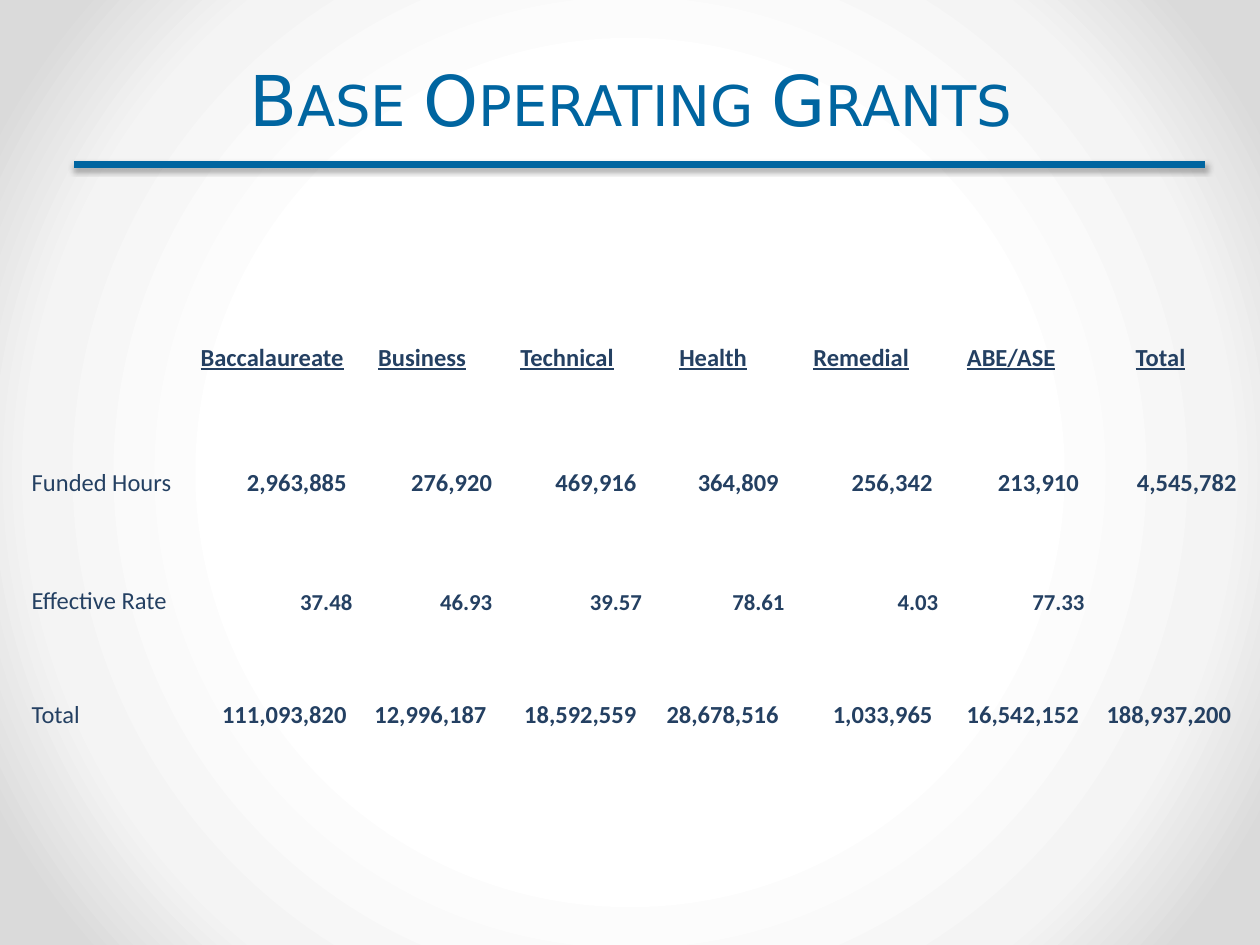
from lxml.etree import SubElement
from pptx import Presentation
from pptx.dml.color import RGBColor
from pptx.enum.shapes import MSO_CONNECTOR
from pptx.enum.text import MSO_ANCHOR, MSO_AUTO_SIZE, PP_ALIGN
from pptx.oxml import parse_xml
from pptx.oxml.ns import nsdecls, qn
from pptx.util import Cm, Pt

BLUE = RGBColor(0x00, 0x65, 0xA0)
NAVY = RGBColor(0x24, 0x40, 0x62)
BLACK = RGBColor(0x00, 0x00, 0x00)
STOPS = (
    (50, RGBColor(0xFF, 0xFF, 0xFF)),
    (76, RGBColor(0xF4, 0xF4, 0xF4)),
    (92, RGBColor(0xDA, 0xDA, 0xDA)),
)
PLAIN = "{2D5ABB26-0587-4C30-8999-92F81FD0307C}"
WIDTHS = (3.23, 3.23, 2.82, 3.02, 2.87, 3.1, 2.95, 3.07)
HEIGHTS = (3.2, 0.91, 1.6, 0.89, 1.5, 0.79, 1.5)
GAP = 0.11
HEADS = ("", "Baccalaureate", "Business", "Technical", "Health",
         "Remedial", "ABE/ASE", "Total")
HOURS = ("Funded Hours", "2,963,885", "276,920", "469,916", "364,809",
         "256,342", "213,910", "4,545,782")
RATES = ("Effective Rate", "37.48", "46.93", "39.57", "78.61", "4.03", "77.33", "")
TOTALS = ("Total", "111,093,820", "12,996,187", "18,592,559", "28,678,516",
          "1,033,965", "16,542,152", "188,937,200")
BLANK = ("",) * len(HEADS)


def write(frame, text, size=14, face="Calibri", color=NAVY, bold=False,
          under=False, caps=False, align=PP_ALIGN.LEFT, lead=None):
    """Put one formatted paragraph in a text frame."""
    para = frame.paragraphs[0]
    para.alignment = align
    if lead:
        para.line_spacing = Pt(lead)
    run = para.add_run()
    run.text = text
    font = run.font
    font.size, font.name, font.bold, font.underline = Pt(size), face, bold, under
    font.color.rgb = color
    if caps:
        run._r.get_or_add_rPr().set("cap", "small")


def paint_back(slide):
    """Give the slide a round gradient from white to grey."""
    slide.background.fill.gradient()
    stops = "".join(
        f'<a:gs pos="{pos * 1000}"><a:srgbClr val="{color}"/></a:gs>'
        for pos, color in STOPS)
    old = slide.element.find(".//" + qn("a:gradFill"))
    old.getparent().replace(old, parse_xml(
        f'<a:gradFill {nsdecls("a")} rotWithShape="1"><a:gsLst>{stops}</a:gsLst>'
        '<a:path path="circle"><a:fillToRect l="50000" t="50000" r="50000" '
        'b="50000"/></a:path></a:gradFill>'))


def set_title(slide, text):
    """Place and fill the title."""
    title = slide.shapes.title
    title.left, title.top, title.width, title.height = (
        Cm(1.3), Cm(0.74), Cm(22.83), Cm(2.21))
    frame = title.text_frame
    frame.auto_size = MSO_AUTO_SIZE.NONE
    frame.vertical_anchor = MSO_ANCHOR.BOTTOM
    write(frame, text, size=40, face="DejaVu Sans", color=BLUE, caps=True,
          align=PP_ALIGN.CENTER, lead=58)


def add_rule(slide):
    """Draw the thick rule with its soft shadow."""
    rule = slide.shapes.add_connector(
        MSO_CONNECTOR.STRAIGHT, Cm(1.5), Cm(3.32), Cm(24.3), Cm(3.32))
    rule.line.color.rgb = BLUE
    rule.line.width = Pt(4)
    effects = SubElement(rule._element.spPr, qn("a:effectLst"))
    shade = SubElement(effects, qn("a:outerShdw"), blurRad=str(Pt(3.1)),
                       dist=str(Pt(1.8)), dir="5400000", rotWithShape="0")
    color = SubElement(shade, qn("a:srgbClr"), val=str(BLACK))
    SubElement(color, qn("a:alpha"), val="35000")


def fill_row(cells, texts, size=14, align=PP_ALIGN.RIGHT, under=False,
             gap=0, flush=()):
    """Fill one row: a plain label, then bold entries."""
    for col, (cell, text) in enumerate(zip(cells, texts)):
        cell.fill.background()
        cell.vertical_anchor = MSO_ANCHOR.BOTTOM
        cell.margin_left = cell.margin_top = cell.margin_bottom = 0
        cell.margin_right = Cm(0 if col == 0 or col in flush else gap)
        if col == 0:
            write(cell.text_frame, text)
        else:
            write(cell.text_frame, text, size=size, bold=True, under=under,
                  align=align)


def add_grid(slide):
    """Build the table of grants."""
    frame = slide.shapes.add_table(
        len(HEIGHTS), len(WIDTHS), Cm(0.64), Cm(4.32),
        Cm(sum(WIDTHS)), Cm(sum(HEIGHTS)))
    table = frame.table
    table.first_row = table.horz_banding = False
    table._tbl.tblPr.find(qn("a:tableStyleId")).text = PLAIN
    for column, width in zip(table.columns, WIDTHS):
        column.width = Cm(width)
    for row, height in zip(table.rows, HEIGHTS):
        row.height = Cm(height)
    rows = [row.cells for row in table.rows]
    fill_row(rows[0], HEADS, align=PP_ALIGN.CENTER, under=True)
    fill_row(rows[2], HOURS, gap=GAP, flush=(2, 7))
    fill_row(rows[4], RATES, size=13)
    fill_row(rows[6], TOTALS, gap=GAP)
    for cells in rows[1::2]:
        fill_row(cells, BLANK)


def main():
    """Build and save the slide."""
    deck = Presentation()
    deck.slide_width, deck.slide_height = Cm(25.4), Cm(19.05)
    slide = deck.slides.add_slide(deck.slide_layouts[5])
    paint_back(slide)
    set_title(slide, "Base Operating Grants")
    add_rule(slide)
    add_grid(slide)
    deck.save("out.pptx")


if __name__ == "__main__":
    main()
